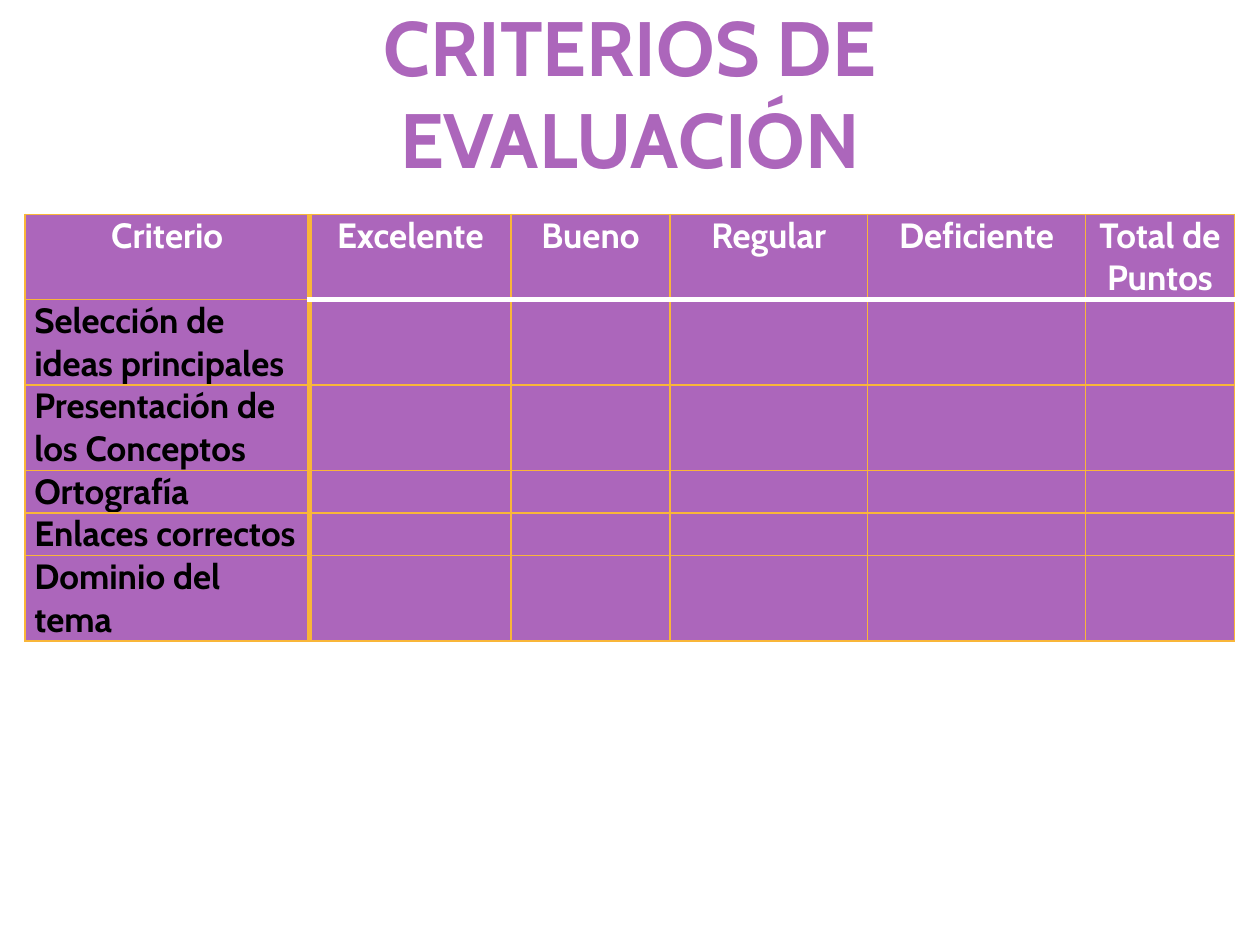
from lxml import etree
from pptx import Presentation
from pptx import util as u
from pptx.dml.color import RGBColor
from pptx.enum import text
from pptx.oxml import ns

FONT, PURPLE, GOLD, WHITE, BLACK = "Cabin", "AC66BB", "F9B639", "FFFFFF", "000000"
THIN, THICK = 0.9, 3.15
HEADS = ["Criterio", "Excelente", "Bueno", "Regular", "Deficiente", "Total de Puntos"]
# Criterion and the number of lines its row takes
ROWS = [("Selección de ideas principales", 2), ("Presentación de los Conceptos", 2),
        ("Ortografía", 1), ("Enlaces correctos", 1), ("Dominio del tema", 2)]
WIDTHS = [162.7, 115.2, 90.7, 113, 124.6, 85]
LINE = 24.4


def rgb(code):
    return RGBColor.from_string(code)


def apply(item, style):
    for name, value in style.items():
        setattr(item, name, value)


class Deck:
    def __init__(self, wide, high):
        self.prs = Presentation()
        apply(self.prs, {"slide_width": u.Pt(wide), "slide_height": u.Pt(high)})
        self.slide = self.prs.slides.add_slide(self.prs.slide_layouts[5])

    def label(self, frame, words, size, color, align):
        para = frame.paragraphs[0]
        para.alignment = align
        run = para.add_run()
        run.text = words
        apply(run.font, {"name": FONT, "size": u.Pt(size), "bold": True})
        run.font.color.rgb = rgb(color)

    def title(self, words, left, top, wide, high):
        box = self.slide.shapes.title
        apply(box, {"left": u.Pt(left), "top": u.Pt(top),
                    "width": u.Pt(wide), "height": u.Pt(high)})
        apply(box.text_frame, {
            "word_wrap": True, "auto_size": text.MSO_AUTO_SIZE.NONE,
            "vertical_anchor": text.MSO_ANCHOR.BOTTOM,
            "margin_left": u.Pt(3.6), "margin_right": u.Pt(3.6),
            "margin_top": 0, "margin_bottom": 0})
        self.label(box.text_frame, words, 44, PURPLE, text.PP_ALIGN.CENTER)

    def edge(self, cell, side, color, width):
        props = cell._tc.get_or_add_tcPr()
        line = etree.SubElement(props, ns.qn("a:ln" + side), w=str(u.Pt(width)))
        fill = etree.SubElement(line, ns.qn("a:solidFill"))
        etree.SubElement(fill, ns.qn("a:srgbClr"), val=color)

    def cell(self, cell, row, col):
        apply(cell, {"margin_left": u.Pt(5.4), "margin_right": u.Pt(5.4),
                     "margin_top": 0, "margin_bottom": 0})
        # Heavy gold rule after the criteria, heavy white rule under the levels
        rule = (WHITE, THICK) if col else (GOLD, THIN)
        thin = (GOLD, THIN)
        self.edge(cell, "L", GOLD, THICK if col == 1 else THIN)
        self.edge(cell, "R", GOLD, THICK if col == 0 else THIN)
        self.edge(cell, "T", *(rule if row == 1 else thin))
        self.edge(cell, "B", *(rule if row == 0 else thin))
        cell.fill.solid()
        cell.fill.fore_color.rgb = rgb(PURPLE)

    def table(self, left, top, heads, rows, widths):
        highs = [2 * LINE] + [count * LINE for _, count in rows]
        grid = self.slide.shapes.add_table(
            len(highs), len(widths), u.Pt(left), u.Pt(top),
            u.Pt(sum(widths)), u.Pt(sum(highs))).table
        apply(grid, {"first_row": False, "horz_banding": False})
        for col, wide in zip(grid.columns, widths):
            col.width = u.Pt(wide)
        for row, high in zip(grid.rows, highs):
            row.height = u.Pt(high)
        for row in range(len(highs)):
            for col in range(len(widths)):
                self.cell(grid.cell(row, col), row, col)
        for col, words in enumerate(heads):
            self.label(grid.cell(0, col).text_frame, words, 20, WHITE, text.PP_ALIGN.CENTER)
        for row, (words, _) in enumerate(rows, 1):
            self.label(grid.cell(row, 0).text_frame, words, 20, BLACK, text.PP_ALIGN.LEFT)


def main():
    deck = Deck(720, 540)
    # Heading
    deck.title("CRITERIOS DE EVALUACIÓN", 184.3, 15.1, 351.4, 90)
    # Rubric
    deck.table(14.2, 122.4, HEADS, ROWS, WIDTHS)
    deck.prs.save("out.pptx")


if __name__ == "__main__":
    main()
